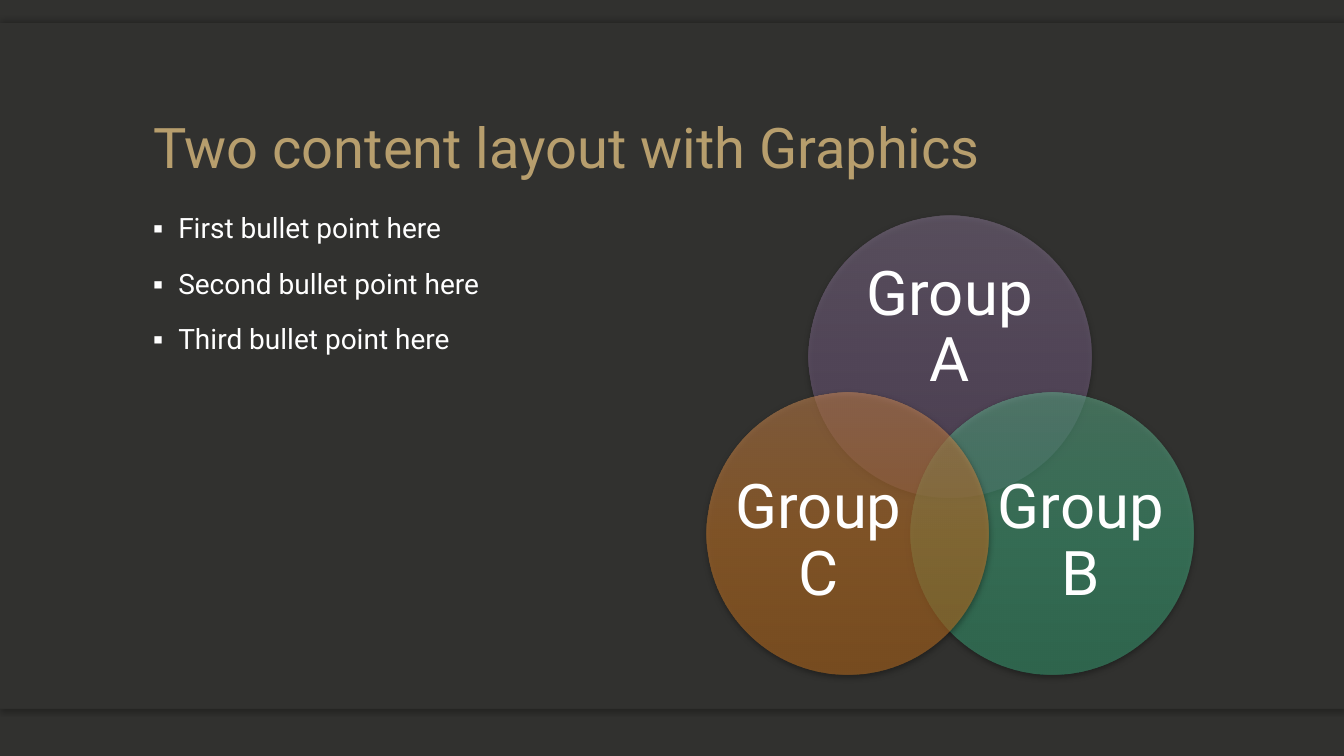
from dataclasses import dataclass
from math import cos, radians, sin

from pptx import Presentation
from pptx.dml.color import RGBColor
from pptx.enum.shapes import MSO_SHAPE
from pptx.enum.text import MSO_ANCHOR, PP_ALIGN
from pptx.oxml import parse_xml
from pptx.oxml.ns import nsdecls, qn
from pptx.util import Inches, Pt


@dataclass(frozen=True)
class Theme:
    font: str = "Roboto"
    background: str = "31312F"
    title: str = "B79E6D"
    text: str = "FFFFFF"
    shadow: str = "000000"
    purple: tuple = ("907D9B", "826A90", "745D81")
    green: tuple = ("69BB96", "4BB88A", "3DA97B")
    orange: tuple = ("DB945A", "DD862F", "CD7721")
    title_size: int = 40
    body_size: int = 20
    label_size: int = 44


THEME = Theme()
WIDTH, HEIGHT = 13.33, 7.5
VENN_X, VENN_Y = 9.42, 4.71
VENN_RADIUS = 1.17
CIRCLE_SIZE = 2.8


def add_shadow(shape, alpha, blur, distance, angle):
    effects = shape._element.spPr.find(qn("a:effectLst"))
    effects.append(parse_xml(
        f'<a:outerShdw {nsdecls("a")} blurRad="{Pt(blur)}" dist="{Pt(distance)}" '
        f'dir="{angle * 60000}" algn="ctr" rotWithShape="0">'
        f'<a:srgbClr val="{THEME.shadow}"><a:alpha val="{alpha * 1000}"/></a:srgbClr>'
        '</a:outerShdw>'))


def add_plain_shape(page, kind, left, top, width, height):
    shape = page.shapes.add_shape(
        kind, Inches(left), Inches(top), Inches(width), Inches(height))
    shape.shadow.inherit = False
    shape.line.fill.background()
    return shape


def add_band(page, top, height, shadow_angle=None):
    band = add_plain_shape(page, MSO_SHAPE.RECTANGLE, 0, top, WIDTH, height)
    band.fill.solid()
    band.fill.fore_color.rgb = RGBColor.from_string(THEME.background)
    if shadow_angle is not None:
        add_shadow(band, alpha=25, blur=4, distance=2, angle=shadow_angle)


def add_bullet(para):
    properties = para._p.get_or_add_pPr()
    properties.set("marL", str(Inches(0.25)))
    properties.set("indent", str(Inches(-0.25)))
    properties.append(parse_xml(f'<a:buSzPct {nsdecls("a")} val="90000"/>'))
    properties.append(parse_xml(
        f'<a:buFont {nsdecls("a")} typeface="{THEME.font}"/>'))
    properties.append(parse_xml(f'<a:buChar {nsdecls("a")} char="▪"/>'))


def add_text(page, lines, left, top, width, height, *, size, color=THEME.text,
             anchor=MSO_ANCHOR.TOP, align=PP_ALIGN.LEFT, bullets=False,
             space_before=0, inset=True):
    box = page.shapes.add_textbox(
        Inches(left), Inches(top), Inches(width), Inches(height))
    frame = box.text_frame
    frame.word_wrap = True
    frame.vertical_anchor = anchor
    if not inset:
        frame.margin_left = frame.margin_right = 0
        frame.margin_top = frame.margin_bottom = 0
    for index, line in enumerate(lines):
        para = frame.add_paragraph() if index else frame.paragraphs[0]
        para.alignment = align
        para.line_spacing = 0.9
        if index:
            para.space_before = Pt(space_before)
        if bullets:
            add_bullet(para)
        span = para.add_run()
        span.text = line
        span.font.name = THEME.font
        span.font.size = Pt(size)
        span.font.color.rgb = RGBColor.from_string(color)


def add_venn_circle(page, angle, colors):
    left = VENN_X + VENN_RADIUS * cos(radians(angle)) - CIRCLE_SIZE / 2
    top = VENN_Y + VENN_RADIUS * sin(radians(angle)) - CIRCLE_SIZE / 2
    circle = add_plain_shape(
        page, MSO_SHAPE.OVAL, left, top, CIRCLE_SIZE, CIRCLE_SIZE)
    stops = "".join(
        f'<a:gs pos="{index * 50000}"><a:srgbClr val="{color}">'
        '<a:alpha val="50000"/></a:srgbClr></a:gs>'
        for index, color in enumerate(colors))
    gradient = parse_xml(
        f'<a:gradFill {nsdecls("a")} rotWithShape="1"><a:gsLst>{stops}</a:gsLst>'
        '<a:lin ang="5400000" scaled="0"/></a:gradFill>')
    circle._element.spPr.find(qn("a:prstGeom")).addnext(gradient)
    add_shadow(circle, alpha=63, blur=4.5, distance=1.5, angle=90)


def add_venn_label(page, label, offset_x, offset_y, width, height):
    add_text(page, [label], VENN_X + offset_x - width / 2,
             VENN_Y + offset_y - height / 2, width, height,
             size=THEME.label_size, anchor=MSO_ANCHOR.MIDDLE,
             align=PP_ALIGN.CENTER, inset=False)


def main():
    deck = Presentation()
    deck.slide_width, deck.slide_height = Inches(WIDTH), Inches(HEIGHT)
    page = deck.slides.add_slide(deck.slide_layouts[6])
    page.background.fill.solid()
    page.background.fill.fore_color.rgb = RGBColor.from_string(THEME.background)

    add_band(page, 6.54, 0.49, shadow_angle=90)
    add_band(page, 0.23, 0.49, shadow_angle=270)
    add_band(page, 0.23, 6.8)

    add_text(page, ["Two content layout with Graphics"], 1.42, 0.46, 10.5, 1.38,
             size=THEME.title_size, color=THEME.title, anchor=MSO_ANCHOR.BOTTOM)
    add_text(page, [f"{order} bullet point here"
                    for order in ("First", "Second", "Third")],
             1.42, 2.08, 5, 4.67, size=THEME.body_size, bullets=True,
             space_before=18)

    groups = [
        ("Group A", -90, THEME.purple, (0, -1.45, 2.05, 1.26)),
        ("Group B", 30, THEME.green, (1.3, 0.67, 1.68, 1.54)),
        ("Group C", 150, THEME.orange, (-1.3, 0.67, 1.68, 1.54)),
    ]
    for label, angle, colors, label_area in groups:
        add_venn_circle(page, angle, colors)
        add_venn_label(page, label, *label_area)

    deck.save("out.pptx")


if __name__ == "__main__":
    main()
